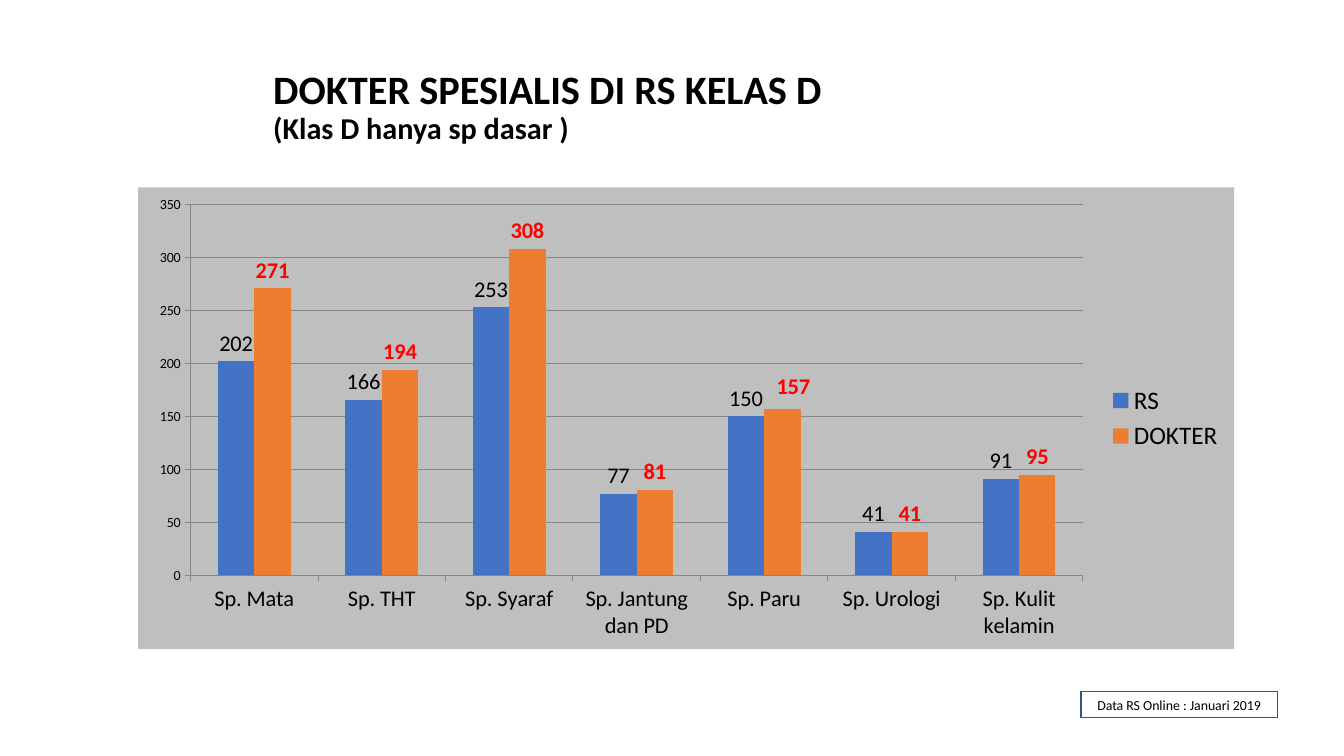
from lxml import etree
from pptx import Presentation
from pptx.chart.data import CategoryChartData
from pptx.dml.color import RGBColor
from pptx.enum.chart import XL_CHART_TYPE, XL_LABEL_POSITION, XL_LEGEND_POSITION, XL_TICK_MARK
from pptx.enum.shapes import MSO_SHAPE
from pptx.enum.text import MSO_ANCHOR, PP_ALIGN
from pptx.oxml.ns import qn
from pptx.util import Inches, Pt

COLUMN = XL_CHART_TYPE.COLUMN_CLUSTERED
LABEL_ABOVE = XL_LABEL_POSITION.OUTSIDE_END
LEGEND_RIGHT = XL_LEGEND_POSITION.RIGHT
TICK_OUT = XL_TICK_MARK.OUTSIDE
RECT = MSO_SHAPE.RECTANGLE
TOP, MIDDLE = MSO_ANCHOR.TOP, MSO_ANCHOR.MIDDLE
LEFT, CENTER = PP_ALIGN.LEFT, PP_ALIGN.CENTER

COLORS = {"text": "000000", "panel": "BFBFBF", "grid": "868686", "rs": "4472C4",
          "dokter": "ED7D31", "highlight": "FF0000", "border": "325491"}
CATEGORIES = ["Sp. Mata", "Sp. THT", "Sp. Syaraf", "Sp. Jantung dan PD",
              "Sp. Paru", "Sp. Urologi", "Sp. Kulit kelamin"]
SERIES = [
    ("RS", [202, 166, 253, 77, 150, 41, 91], "rs", {"size": 16}),
    ("DOKTER", [271, 194, 308, 81, 157, 41, 95], "dokter",
     {"size": 16, "bold": True, "color_name": "highlight"}),
]


def color(name):
    return RGBColor.from_string(COLORS[name])


def manual_layout(**values):
    layout = etree.Element(qn("c:layout"))
    manual = etree.SubElement(layout, qn("c:manualLayout"))
    for tag, value in values.items():
        etree.SubElement(manual, qn(f"c:{tag}")).set("val", str(value))
    return layout


class SlideBuilder:
    font_name = "Calibri"

    def __init__(self, slide):
        self.slide = slide

    def style(self, font, size, color_name="text", bold=False):
        for name, value in {"name": self.font_name, "size": Pt(size), "bold": bold}.items():
            setattr(font, name, value)
        font.color.rgb = color(color_name)

    def frame(self, sp, anchor):
        tf = sp.text_frame
        for name, value in {"word_wrap": True, "vertical_anchor": anchor,
                            "margin_left": Inches(0.09), "margin_right": Inches(0.09),
                            "margin_top": Inches(0.04), "margin_bottom": Inches(0.04)}.items():
            setattr(tf, name, value)
        return tf

    def title(self, box, lines):
        sp = self.slide.shapes.add_textbox(*map(Inches, box))
        p = self.frame(sp, TOP).paragraphs[0]
        p.alignment, p.line_spacing = LEFT, 0.9
        for i, (text, size) in enumerate(lines):
            if i:
                p.add_line_break()
            r = p.add_run()
            r.text = text
            self.style(r.font, size, bold=True)

    def note(self, box, text, size):
        sp = self.slide.shapes.add_shape(RECT, *map(Inches, box))
        sp.shadow.inherit = False
        sp.fill.background()
        sp.line.color.rgb = color("border")
        sp.line.width = Pt(1)
        p = self.frame(sp, MIDDLE).paragraphs[0]
        p.alignment = CENTER
        r = p.add_run()
        r.text = text
        self.style(r.font, size)

    def axis(self, axis, size):
        axis.major_tick_mark = TICK_OUT
        axis.format.line.color.rgb = color("grid")
        self.style(axis.tick_labels.font, size)

    def column_chart(self, box, plot_box, categories, series):
        data = CategoryChartData()
        data.categories = categories
        for name, values, *_ in series:
            data.add_series(name, values)
        chart = self.slide.shapes.add_chart(COLUMN, *map(Inches, box), data).chart
        chart.has_title = False
        self.style(chart.font, 10)

        # Axes
        self.axis(chart.category_axis, 16)
        values = chart.value_axis
        self.axis(values, 10)
        values.minimum_scale, values.maximum_scale, values.major_unit = 0, 350, 50
        values.has_major_gridlines = True
        values.major_gridlines.format.line.color.rgb = color("grid")

        # Legend
        chart.has_legend = True
        chart.legend.position = LEGEND_RIGHT
        chart.legend.include_in_layout = False
        self.style(chart.legend.font, 18)

        # Columns and their labels
        plot = chart.plots[0]
        plot.gap_width, plot.overlap, plot.vary_by_categories = 150, 0, False
        for ser, (_, _, fill, label_style) in zip(plot.series, series):
            ser.format.fill.solid()
            ser.format.fill.fore_color.rgb = color(fill)
            labels = ser.data_labels
            labels.show_value, labels.position = True, LABEL_ABOVE
            self.style(labels.font, **label_style)

        # Plot area position and panel fill
        _, _, width, height = box
        x, y, w, h = plot_box
        area = chart._chartSpace.chart.plotArea
        for old in area.findall(qn("c:layout")):
            area.remove(old)
        area.insert(0, manual_layout(layoutTarget="inner", xMode="edge", yMode="edge",
                                     x=x / width, y=y / height, w=w / width, h=h / height))
        panel = etree.Element(qn("c:spPr"))
        solid = etree.SubElement(panel, qn("a:solidFill"))
        etree.SubElement(solid, qn("a:srgbClr")).set("val", COLORS["panel"])
        line = etree.SubElement(panel, qn("a:ln"))
        etree.SubElement(line, qn("a:noFill"))
        chart._chartSpace.chart.addnext(panel)
        return chart

    def shift_label(self, series, index, dx, dy, label_style):
        label = series.points[index].data_label
        label.position = LABEL_ABOVE
        self.style(label.font, **label_style)
        idx = series._element.find(f".//{qn('c:dLbl')}/{qn('c:idx')}")
        idx.addnext(manual_layout(x=dx, y=dy))


def main():
    prs = Presentation()
    prs.slide_width, prs.slide_height = Inches(13.33), Inches(7.5)
    s = SlideBuilder(prs.slides.add_slide(prs.slide_layouts[6]))

    # Chart of hospitals and doctors
    chart = s.column_chart((1.37, 1.86, 10.87, 4.58), (0.52, 0.17, 8.85, 3.68),
                           CATEGORIES, SERIES)
    s.shift_label(chart.plots[0].series[1], CATEGORIES.index("Sp. Paru"),
                  0.01, -0.01, SERIES[1][3])

    # Title and data source
    s.title((2.62, 0.65, 8.1, 1.12),
            [("DOKTER SPESIALIS DI RS KELAS D", 28.8), ("(Klas D hanya sp dasar )", 21.6)])
    s.note((10.72, 6.86, 1.95, 0.26), "Data RS Online : Januari 2019", 9.9)

    prs.save("out.pptx")


if __name__ == "__main__":
    main()
